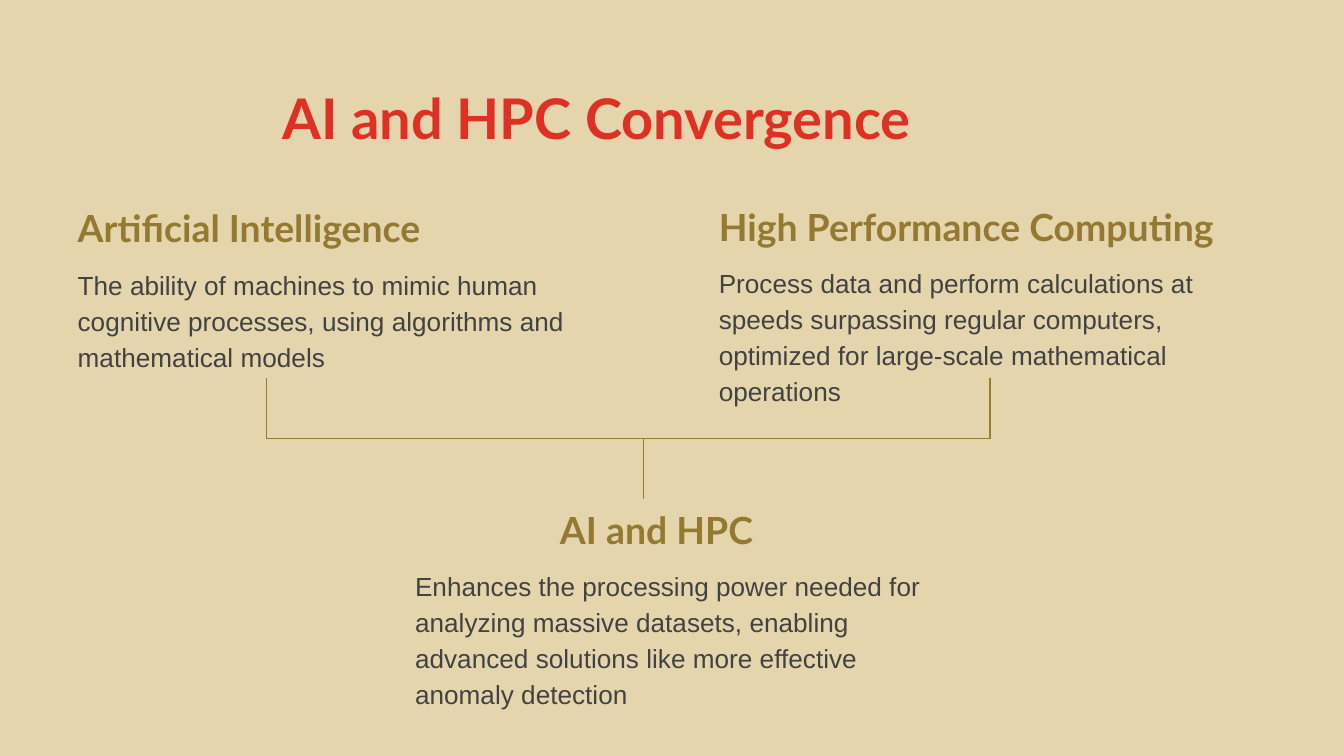
import dataclasses

import pptx
import pptx.dml.color
import pptx.enum.shapes
import pptx.enum.text
import pptx.oxml.ns
import pptx.shapes.autoshape
import pptx.util
from lxml import etree

EMU_PER_PX = 4572  # 200 px to the inch
SLIDE_WIDTH, SLIDE_HEIGHT = 2000, 1125
INSET = 20
BACKGROUND, RED, GOLD, LINE_GOLD, GREY = "E4D5AC", "DF3024", "947930", "977C31", "424242"

Align = pptx.enum.text.PP_ALIGN
Anchor = pptx.enum.text.MSO_ANCHOR


@dataclasses.dataclass(frozen=True)
class Box:
    left: int
    top: int
    width: int
    height: int


@dataclasses.dataclass(frozen=True)
class TextStyle:
    font: str
    size: int
    color: str
    bold: bool = False
    anchor: Anchor = Anchor.TOP


@dataclasses.dataclass(frozen=True)
class Topic:
    heading: str
    heading_box: Box
    description: str
    description_box: Box
    heading_align: Align = Align.LEFT


TITLE = TextStyle("Lato", 30, RED, bold=True)
HEADING = TextStyle("Lato", 20, GOLD, bold=True, anchor=Anchor.BOTTOM)
DESCRIPTION = TextStyle("Arial", 14, GREY)

TOPICS = [
    Topic("Artificial Intelligence", Box(96, 312, 934, 80),
          "The ability of machines to mimic human cognitive processes, "
          "using algorithms and mathematical models", Box(96, 374, 846, 196)),
    Topic("High Performance Computing", Box(1050, 310, 894, 80),
          "Process data and perform calculations at speeds surpassing regular computers, "
          "optimized for large-scale mathematical operations", Box(1050, 371, 846, 200)),
    Topic("AI and HPC", Box(775, 761, 404, 80),
          "Enhances the processing power needed for analyzing massive datasets, enabling "
          "advanced solutions like more effective anomaly detection", Box(598, 822, 846, 176),
          Align.CENTER),
]

# Bracket that joins the two upper topics and leads to the lower one
BRACKET_LEFT, BRACKET_RIGHT, STEM_X = 397, 1473, 958
BRACKET_TOP, BRACKET_Y, STEM_BOTTOM = 563, 653, 742


def px(length: int) -> pptx.util.Emu:
    return pptx.util.Emu(length * EMU_PER_PX)


def rgb(color: str) -> pptx.dml.color.RGBColor:
    return pptx.dml.color.RGBColor.from_string(color)


def write_text(shape: pptx.shapes.autoshape.Shape, text: str, style: TextStyle,
               align: Align) -> None:
    frame = shape.text_frame
    frame.word_wrap = True
    frame.auto_size = pptx.enum.text.MSO_AUTO_SIZE.NONE
    frame.vertical_anchor = style.anchor
    frame.margin_left = frame.margin_right = px(INSET)
    frame.margin_top = frame.margin_bottom = px(INSET)
    paragraph = frame.paragraphs[0]
    paragraph.alignment = align
    paragraph.line_spacing = 1.15
    run = paragraph.add_run()
    run.text = text
    run.font.name = style.font
    run.font.size = pptx.util.Pt(style.size)
    run.font.bold = style.bold
    run.font.color.rgb = rgb(style.color)


def add_text(shapes, box: Box, text: str, style: TextStyle, align: Align = Align.LEFT) -> None:
    textbox = shapes.add_textbox(px(box.left), px(box.top), px(box.width), px(box.height))
    write_text(textbox, text, style, align)


def add_topic(slide, topic: Topic) -> None:
    group = slide.shapes.add_group_shape()
    add_text(group.shapes, topic.heading_box, topic.heading, HEADING, topic.heading_align)
    add_text(group.shapes, topic.description_box, topic.description, DESCRIPTION)


def add_line(slide, x1: int, y1: int, x2: int, y2: int) -> None:
    line = slide.shapes.add_connector(
        pptx.enum.shapes.MSO_CONNECTOR.STRAIGHT, px(x1), px(y1), px(x2), px(y2))
    line.line.color.rgb = rgb(LINE_GOLD)
    line.line.width = pptx.util.Pt(0.75)
    etree.SubElement(line._element.spPr, pptx.oxml.ns.qn("a:effectLst"))


def main() -> None:
    deck = pptx.Presentation()
    deck.slide_width, deck.slide_height = px(SLIDE_WIDTH), px(SLIDE_HEIGHT)
    slide = deck.slides.add_slide(deck.slide_layouts.get_by_name("Title Only"))
    slide.background.fill.solid()
    slide.background.fill.fore_color.rgb = rgb(BACKGROUND)

    # Title
    title = slide.shapes.title
    title.left, title.top, title.width, title.height = px(46), px(90), px(1684), px(146)
    write_text(title, "AI and HPC Convergence", TITLE, Align.CENTER)

    # Topics
    for topic in TOPICS:
        add_topic(slide, topic)

    # Bracket
    for x in (BRACKET_LEFT, BRACKET_RIGHT):
        add_line(slide, x, BRACKET_TOP, x, BRACKET_Y)
    add_line(slide, BRACKET_LEFT, BRACKET_Y, BRACKET_RIGHT, BRACKET_Y)
    add_line(slide, STEM_X, BRACKET_Y, STEM_X, STEM_BOTTOM)

    deck.save("out.pptx")


if __name__ == "__main__":
    main()
